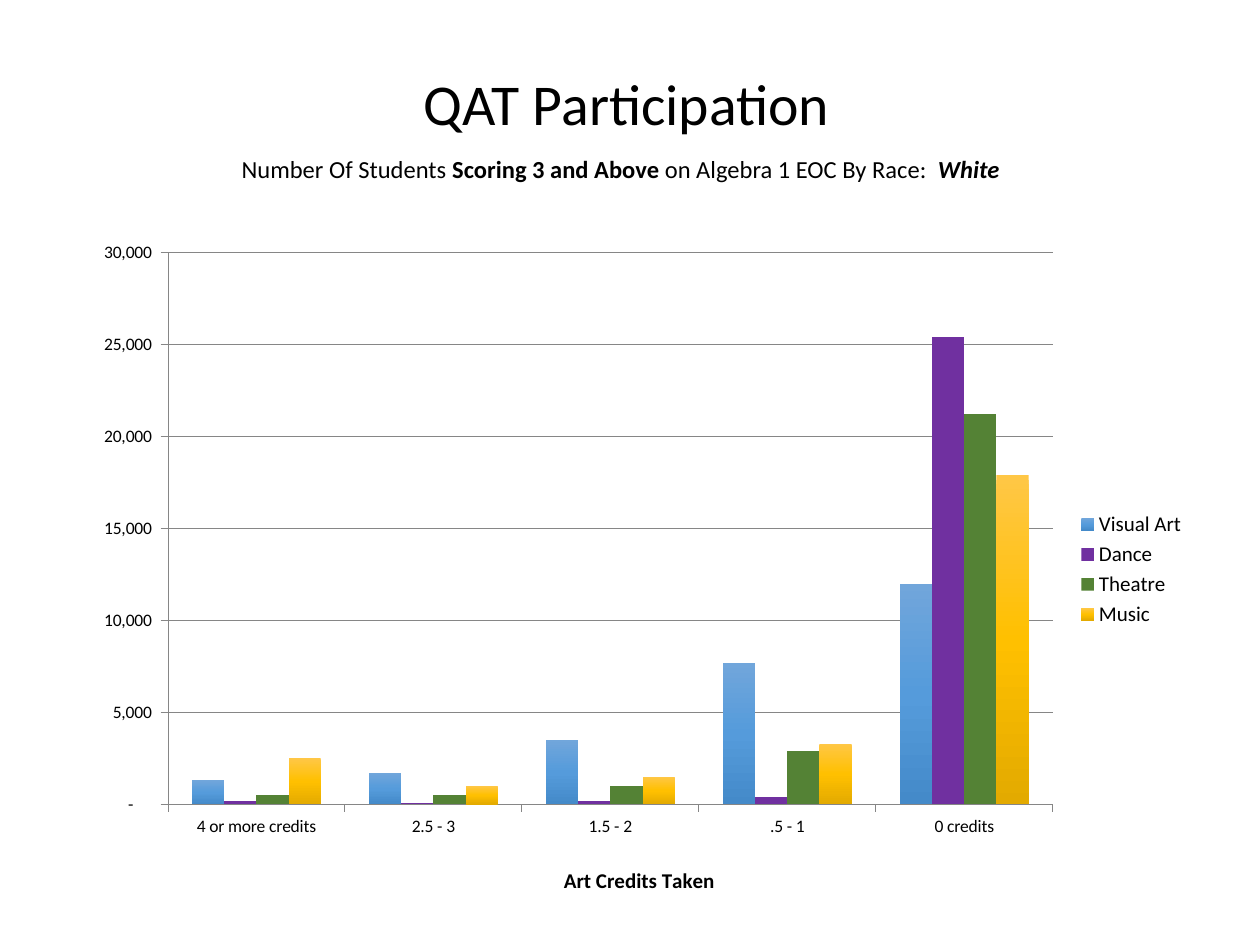
from copy import deepcopy
from typing import NamedTuple

from lxml import etree
from pptx import Presentation
from pptx.chart.data import CategoryChartData
from pptx.dml.color import RGBColor
from pptx.enum.chart import XL_CHART_TYPE, XL_LEGEND_POSITION, XL_TICK_MARK
from pptx.enum.text import MSO_ANCHOR, PP_ALIGN
from pptx.oxml.ns import qn
from pptx.util import Cm, Pt

COLUMN = XL_CHART_TYPE.COLUMN_CLUSTERED
LEGEND_RIGHT = XL_LEGEND_POSITION.RIGHT
TICK_OUT = XL_TICK_MARK.OUTSIDE
MIDDLE, TOP = MSO_ANCHOR.MIDDLE, MSO_ANCHOR.TOP
CENTER = PP_ALIGN.CENTER

FONT = "Calibri"
BLACK = RGBColor(0x00, 0x00, 0x00)
GREY = RGBColor(0x86, 0x86, 0x86)
PURPLE = RGBColor(0x70, 0x30, 0xA0)
GREEN = RGBColor(0x54, 0x82, 0x35)
BLUES = (RGBColor(0x71, 0xA6, 0xDB), RGBColor(0x55, 0x9B, 0xDB), RGBColor(0x44, 0x8A, 0xC9))
GOLDS = (RGBColor(0xFF, 0xC7, 0x46), RGBColor(0xFF, 0xC0, 0x00), RGBColor(0xE3, 0xAA, 0x00))
NUMBER_FORMAT = '_(* #,##0_);_(* \\(#,##0\\);_(* "-"??_);_('
CHART_WIDTH, CHART_HEIGHT = 22.58, 13.72


class Run(NamedTuple):
    text: str
    bold: bool = False
    italic: bool = False


class TextSpec(NamedTuple):
    box: tuple[float, float, float, float]
    size: float
    anchor: MSO_ANCHOR
    runs: tuple[Run, ...]


class SeriesSpec(NamedTuple):
    name: str
    values: tuple[int, ...]
    colors: tuple[RGBColor, ...]


TEXTS = (
    TextSpec((4.06, 0.86, 17.15, 2.39), 33, MIDDLE, (Run("QAT Participation"),)),
    TextSpec((2.21, 2.98, 20.6, 0.86), 14, TOP, (
        Run("Number Of Students "),
        Run("Scoring 3 and Above ", bold=True),
        Run("on Algebra 1 EOC By Race:  "),
        Run("White", bold=True, italic=True),
    )),
)
CREDITS = ("4 or more credits", "2.5 - 3", "1.5 - 2", ".5 - 1", "0 credits")
ARTS = (
    SeriesSpec("Visual Art", (1300, 1700, 3500, 7700, 12000), BLUES),
    SeriesSpec("Dance", (200, 100, 200, 400, 25400), (PURPLE,)),
    SeriesSpec("Theatre", (500, 500, 1000, 2900, 21200), (GREEN,)),
    SeriesSpec("Music", (2500, 1000, 1500, 3300, 17900), GOLDS),
)


def style_font(font, size: float, bold: bool = False, italic: bool = False) -> None:
    font.name, font.size = FONT, Pt(size)
    font.bold, font.italic = bold, italic
    font.color.rgb = BLACK


def add_text(s, spec: TextSpec) -> None:
    tf = s.shapes.add_textbox(*map(Cm, spec.box)).text_frame
    tf.word_wrap = True
    tf.vertical_anchor = spec.anchor
    p = tf.paragraphs[0]
    p.alignment = CENTER
    for run in spec.runs:
        r = p.add_run()
        r.text = run.text
        style_font(r.font, spec.size, run.bold, run.italic)


def set_layout(parent, **values: object) -> None:
    layout = parent.find(qn("c:layout"))
    if layout is None:
        layout = etree.Element(qn("c:layout"))
        parent.insert(1 if parent.tag == qn("c:title") else 0, layout)
    manual = etree.SubElement(layout, qn("c:manualLayout"))
    for name, value in values.items():
        etree.SubElement(manual, qn(f"c:{name}"), val=str(value))


def fill_series(series, colors: tuple[RGBColor, ...]) -> None:
    fill = series.format.fill
    if len(colors) == 1:
        fill.solid()
        fill.fore_color.rgb = colors[0]
        return
    fill.gradient()
    fill.gradient_angle = 270
    stops = series._element.find(".//" + qn("a:gsLst"))
    stops.insert(1, deepcopy(stops[0]))
    for i, (stop, color) in enumerate(zip(fill.gradient_stops, colors)):
        stop.position = i / (len(colors) - 1)
        stop.color.rgb = color


def style_line(line) -> None:
    line.color.rgb = GREY
    line.width = Pt(0.5)


def style_axis(axis) -> None:
    axis.major_tick_mark = TICK_OUT
    style_line(axis.format.line)
    style_font(axis.tick_labels.font, 10)


def add_chart(s) -> None:
    data = CategoryChartData(number_format="#,##0")
    data.categories = CREDITS
    for art in ARTS:
        data.add_series(art.name, art.values)
    box = map(Cm, (1.58, 4.62, CHART_WIDTH, CHART_HEIGHT))
    chart = s.shapes.add_chart(COLUMN, *box, data).chart
    style_font(chart.font, 18)
    chart.has_title = False
    chart.has_legend = True
    chart.legend.position = LEGEND_RIGHT
    chart.legend.include_in_layout = False
    style_font(chart.legend.font, 12)

    plot = chart.plots[0]
    plot.gap_width, plot.overlap = 150, 0
    plot.vary_by_categories = False
    for series, art in zip(plot.series, ARTS):
        fill_series(series, art.colors)

    cat, val = chart.category_axis, chart.value_axis
    style_axis(cat)
    style_axis(val)
    val.minimum_scale, val.maximum_scale, val.major_unit = 0, 30000, 5000
    val.has_major_gridlines = True
    style_line(val.major_gridlines.format.line)
    val.tick_labels.number_format = NUMBER_FORMAT
    val.tick_labels.number_format_is_linked = False

    r = cat.axis_title.text_frame.paragraphs[0].add_run()
    r.text = "Art Credits Taken"
    style_font(r.font, 12, bold=True)
    set_layout(cat.axis_title._element, xMode="edge", yMode="edge", x=0.43, y=0.93)
    set_layout(chart._chartSpace.find(".//" + qn("c:plotArea")), layoutTarget="inner",
               xMode="edge", yMode="edge", x=0.08, y=0.47 / CHART_HEIGHT,
               w=0.79, h=11.13 / CHART_HEIGHT)


def main() -> None:
    prs = Presentation()
    prs.slide_width, prs.slide_height = Cm(25.4), Cm(19.05)
    s = prs.slides.add_slide(prs.slide_layouts[6])
    add_chart(s)
    for spec in TEXTS:
        add_text(s, spec)
    prs.save("out.pptx")


if __name__ == "__main__":
    main()
